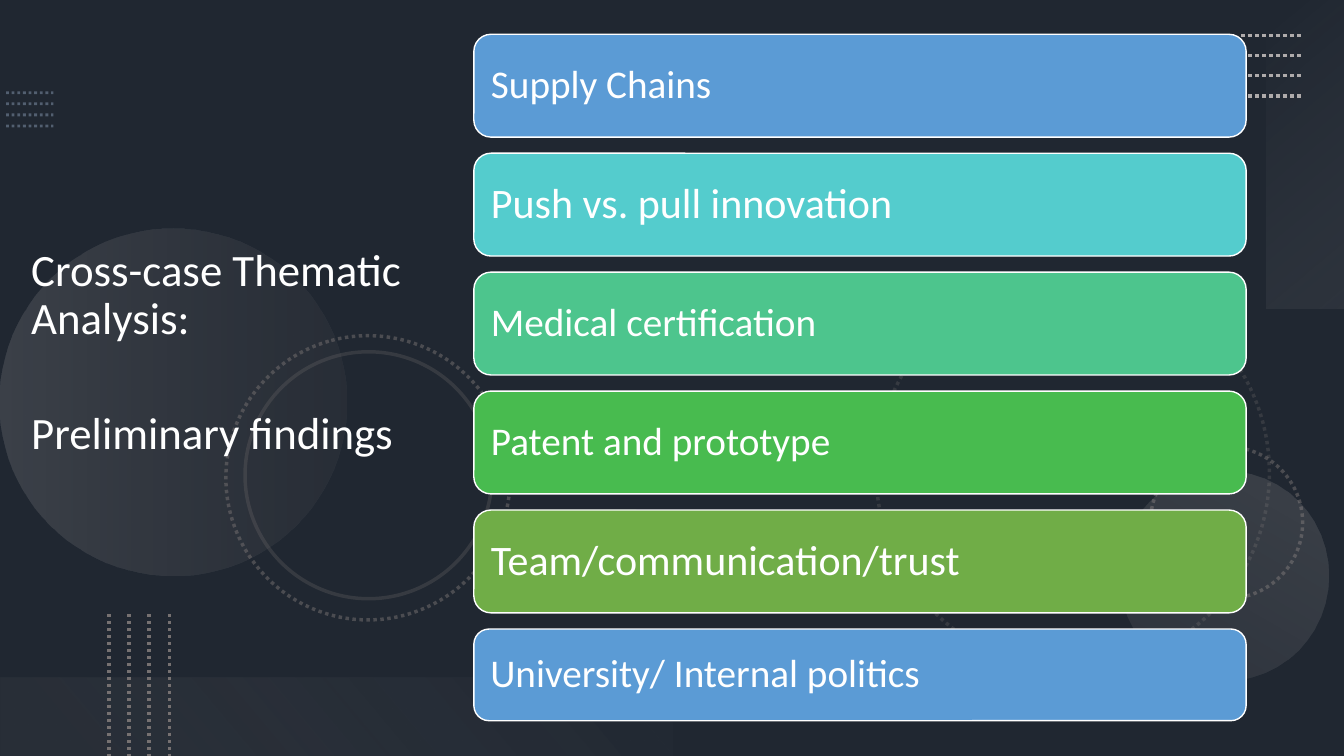
from lxml.etree import SubElement
from pptx import Presentation
from pptx.dml.color import RGBColor
from pptx.enum.dml import MSO_LINE
from pptx.enum.shapes import MSO_CONNECTOR, MSO_SHAPE
from pptx.enum.text import MSO_ANCHOR, MSO_AUTO_SIZE, PP_ALIGN
from pptx.oxml import parse_xml
from pptx.oxml.ns import nsdecls, qn
from pptx.util import Pt

PX = 9144  # 100 px to the inch
WIDTH, HEIGHT = 1333, 750
FONT = "Calibri"
COLORS = {
    "slate": "44546A", "black": "000000", "white": "FFFFFF",
    "steel": "8497B0", "silver": "AFABAB", "gray": "767171",
    "mist": "F5F5F5", "pearl": "F1F0F0",
    "blue": "5B9BD5", "aqua": "54CCCD", "mint": "4DC58D",
    "green": "48BB4F", "olive": "70AD47",
}
# text, colour, font size, height
THEMES = [
    ("Supply Chains", "blue", 28, 102),
    ("Push vs. pull innovation", "aqua", 30, 102),
    ("Medical certification", "mint", 28, 102),
    ("Patent and prototype", "green", 28, 102),
    ("Team/communication/trust", "olive", 30, 102),
    ("University/ Internal politics", "blue", 28, 91),
]
BAR_LEFT, BAR_TOP, BAR_WIDTH, BAR_PITCH = 470, 34, 766, 118


def rgb(name):
    return RGBColor.from_string(COLORS[name])


def set_alpha(fill_parent, percent):
    color = next(fill_parent.iter(qn("a:srgbClr")))
    SubElement(color, qn("a:alpha")).set("val", str(percent * 1000))


def set_line(line, color, width, dash=None, alpha=100):
    line.color.rgb = rgb(color)
    line.width = Pt(width)
    if dash:
        line.dash_style = dash
    if alpha < 100:
        set_alpha(line._get_or_add_ln(), alpha)


def add_plain_shape(slide, kind, box, rotation=0):
    """Add a preset shape without shadow, fill or line."""
    shape = slide.shapes.add_shape(kind, *(length * PX for length in box))
    shape.shadow.inherit = False
    shape.fill.background()
    shape.line.fill.background()
    shape.rotation = rotation
    return shape


def set_gradient(shape, stops, angle):
    """Fill with (position, colour, alpha) stops, all in percent."""
    stop_xml = "".join(
        f'<a:gs pos="{position * 1000}"><a:srgbClr val="{COLORS[color]}">'
        f'<a:alpha val="{alpha * 1000}"/></a:srgbClr></a:gs>'
        for position, color, alpha in stops)
    gradient = parse_xml(
        f'<a:gradFill {nsdecls("a")} rotWithShape="1"><a:gsLst>{stop_xml}</a:gsLst>'
        f'<a:lin ang="{angle * 60000}" scaled="0"/></a:gradFill>')
    properties = shape._element.spPr
    properties.replace(properties.find(qn("a:noFill")), gradient)


def add_dotted_lines(slide, start, end, step, count, color, width, alpha=100):
    """Add parallel dotted lines, each moved by step from the one before."""
    for index in range(count):
        points = [(x + index * step[0], y + index * step[1]) for x, y in (start, end)]
        connector = slide.shapes.add_connector(
            MSO_CONNECTOR.STRAIGHT, *(value * PX for point in points for value in point))
        set_line(connector.line, color, width, MSO_LINE.ROUND_DOT, alpha)
        SubElement(connector._element.spPr, qn("a:effectLst"))


def add_ring(slide, left, top, size, rotation, dash, alpha):
    ring = add_plain_shape(slide, MSO_SHAPE.OVAL, (left, top, size, size), rotation)
    set_line(ring.line, "gray", 2.5, dash, alpha)


def add_gradient_shape(slide, kind, box, rotation, stops, angle):
    set_gradient(add_plain_shape(slide, kind, box, rotation), stops, angle)


def add_backdrop(slide):
    slide.background.fill.solid()
    slide.background.fill.fore_color.rgb = rgb("slate")
    shade = add_plain_shape(slide, MSO_SHAPE.RECTANGLE, (0, 0, WIDTH, HEIGHT))
    shade.fill.solid()
    shade.fill.fore_color.rgb = rgb("black")
    set_alpha(shade._element.spPr, 53)


def add_decoration(slide):
    dotted = MSO_LINE.ROUND_DOT
    add_dotted_lines(slide, (6, 92), (53, 92), (0, 11), 4, "steel", 2, 50)
    add_ring(slide, 869, 274, 390, 75, dotted, 25)
    add_ring(slide, 1141, 443, 151, 270, dotted, 50)
    add_gradient_shape(slide, MSO_SHAPE.OVAL, (0, 227, 344, 344), 270,
                       [(0, "silver", 20), (100, "gray", 10)], 90)
    add_gradient_shape(slide, MSO_SHAPE.OVAL, (1110, 467, 208, 208), 210,
                       [(0, "silver", 10), (100, "silver", 20)], 90)
    add_ring(slide, 224, 333, 282, 75, dotted, 50)
    add_ring(slide, 243, 349, 245, 75, None, 25)
    add_gradient_shape(slide, MSO_SHAPE.RECTANGLE, (1142, 114, 306, 78), 270,
                       [(0, "mist", 0), (100, "silver", 10)], 140)
    add_dotted_lines(slide, (1231, 35), (1291, 35), (0, 20), 4, "silver", 2.5)
    add_gradient_shape(slide, MSO_SHAPE.RECTANGLE, (0, 672, 667, 78), 180,
                       [(10, "gray", 10), (100, "pearl", 0)], 140)
    add_dotted_lines(slide, (108, 609), (108, 750), (20, 0), 4, "gray", 2.5)


def write_text(shape, text, size, **frame_format):
    frame = shape.text_frame
    frame.text = text
    frame_format |= {"word_wrap": True, "auto_size": MSO_AUTO_SIZE.NONE,
                     "vertical_anchor": MSO_ANCHOR.MIDDLE}
    for name, value in frame_format.items():
        setattr(frame, name, value)
    paragraph = frame.paragraphs[0]
    paragraph.alignment = PP_ALIGN.LEFT
    paragraph.line_spacing = 0.9
    for run in paragraph.runs:
        for name, value in {"name": FONT, "size": Pt(size), "bold": False}.items():
            setattr(run.font, name, value)
        run.font.color.rgb = rgb("white")


def add_title(slide):
    title = slide.shapes.title
    box = {"left": 21, "top": 42, "width": 453, "height": 617}
    for name, value in box.items():
        setattr(title, name, value * PX)
    write_text(title, "Cross-case Thematic Analysis:\v\vPreliminary findings", 32)
    slide.shapes._spTree.append(title._element)  # in front of the decoration


def add_theme_bar(slide, top, text, color, size, height):
    bar = add_plain_shape(slide, MSO_SHAPE.ROUNDED_RECTANGLE,
                          (BAR_LEFT, top, BAR_WIDTH, height))
    bar.fill.solid()
    bar.fill.fore_color.rgb = rgb(color)
    set_line(bar.line, "white", 1)
    # The rounded outline itself insets the text by another 5 px
    write_text(bar, text, size, margin_left=12 * PX, margin_right=12 * PX)


def main():
    presentation = Presentation()
    presentation.slide_width = WIDTH * PX
    presentation.slide_height = HEIGHT * PX
    slide = presentation.slides.add_slide(presentation.slide_layouts[5])
    add_backdrop(slide)
    add_decoration(slide)
    add_title(slide)
    for index, theme in enumerate(THEMES):
        add_theme_bar(slide, BAR_TOP + index * BAR_PITCH, *theme)
    presentation.save("out.pptx")


if __name__ == "__main__":
    main()
